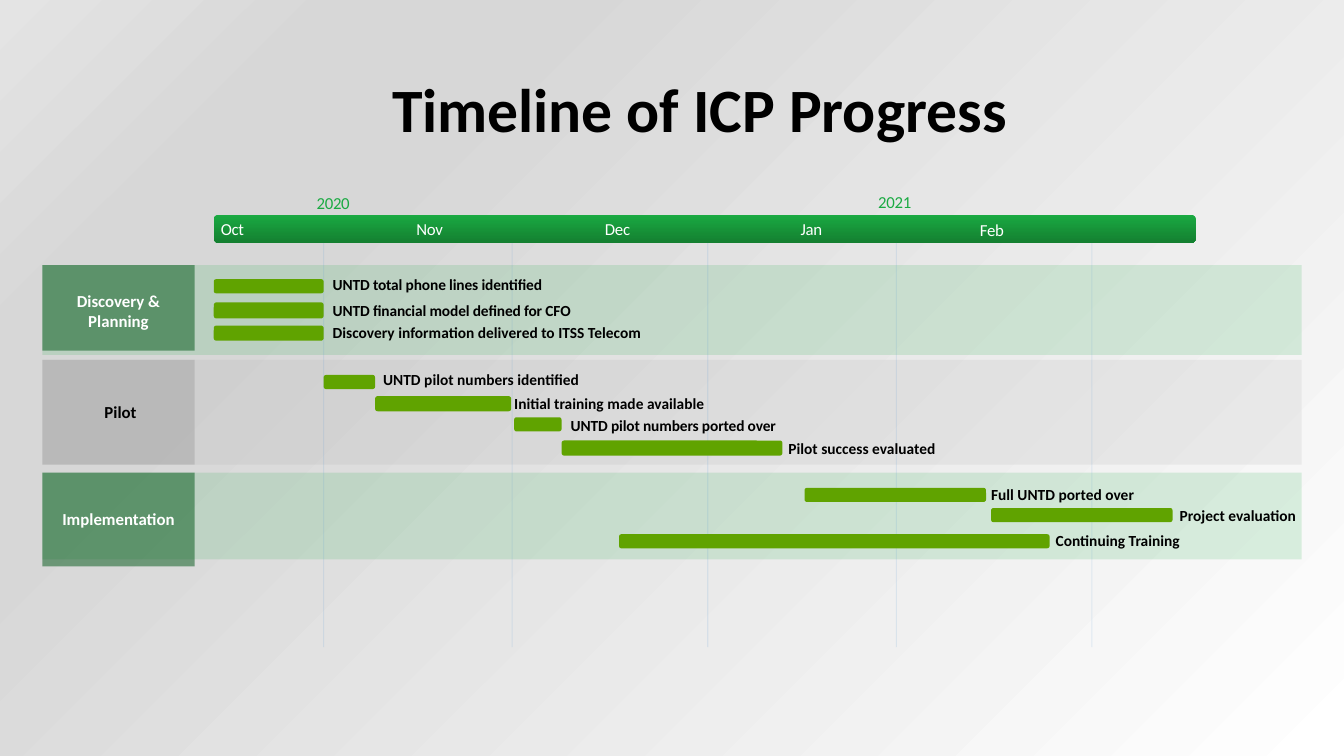
from lxml import etree
from pptx import Presentation
from pptx.dml.color import RGBColor
from pptx.enum.shapes import MSO_CONNECTOR, MSO_SHAPE
from pptx.enum.text import MSO_ANCHOR, PP_ALIGN
from pptx.oxml import parse_xml
from pptx.oxml.ns import qn
from pptx.util import Inches, Pt

GREEN = RGBColor(0x1A, 0xAA, 0x42)
SHADE = RGBColor(0x14, 0x7F, 0x30)
FOREST = RGBColor(0x00, 0x56, 0x16)
GRAY = RGBColor(0xA5, 0xA5, 0xA5)
BLUE = RGBColor(0x5B, 0x9B, 0xD5)
LIME = RGBColor(0x60, 0xA3, 0x00)
WHITE = RGBColor(0xFF, 0xFF, 0xFF)
BLACK = RGBColor(0x00, 0x00, 0x00)

BACKDROP = """<a:gradFill rotWithShape="1"
 xmlns:a="http://schemas.openxmlformats.org/drawingml/2006/main"><a:gsLst>
<a:gs pos="0"><a:srgbClr val="FFFFFF"/></a:gs>
<a:gs pos="74000"><a:srgbClr val="D7D7D7"/></a:gs>
<a:gs pos="83000"><a:srgbClr val="D7D7D7"/></a:gs>
<a:gs pos="100000"><a:srgbClr val="E4E4E4"/></a:gs></a:gsLst>
<a:path path="circle"><a:fillToRect l="100000" t="100000"/></a:path></a:gradFill>"""

prs = Presentation()
prs.slide_width, prs.slide_height = Inches(13.33), Inches(7.5)
s = prs.slides.add_slide(prs.slide_layouts[6])
s.background.fill.gradient()
grad = s.element.find(".//" + qn("a:gradFill"))
grad.getparent().replace(grad, parse_xml(BACKDROP))


def add_block(kind, x, y, w, h, color, alpha=100):
    sp = s.shapes.add_shape(kind, Inches(x), Inches(y), Inches(w), Inches(h))
    sp.shadow.inherit = False
    sp.line.fill.background()
    sp.fill.solid()
    sp.fill.fore_color.rgb = color
    if alpha < 100:
        clr = sp.element.spPr.find(".//" + qn("a:srgbClr"))
        etree.SubElement(clr, qn("a:alpha"), val=str(alpha * 1000))
    return sp


def add_text(text, x, y, w, h, size, color, bold=False, align=PP_ALIGN.LEFT, spacing=0):
    tf = s.shapes.add_textbox(Inches(x), Inches(y), Inches(w), Inches(h)).text_frame
    tf.margin_left = tf.margin_right = tf.margin_top = tf.margin_bottom = 0
    tf.vertical_anchor = MSO_ANCHOR.MIDDLE
    tf.word_wrap = True
    tf.text = text
    for p in tf.paragraphs:
        p.alignment = align
        for r in p.runs:
            r.font.name, r.font.size, r.font.bold = "Calibri", Pt(size), bold
            r.font.color.rgb = color
            if spacing:
                r.font._element.set("spc", str(spacing))
    return tf


phases = [
    ("Discovery &\nPlanning", 2.63, 0.89, 0.85, GREEN, FOREST, WHITE, 0.42, 2.89, 0.39),
    ("Pilot", 3.57, 1.04, 1.04, GRAY, GRAY, BLACK, 0.44, 3.88, 0.41),
    ("Implementation", 4.69, 0.86, 0.93, GREEN, FOREST, WHITE, 0.42, 5.04, 0.21),
]
for name, y, band_h, head_h, band, head, ink, tx, ty, th in phases:
    add_block(MSO_SHAPE.RECTANGLE, 0.42, y, 12.49, band_h, band, 15)
    add_block(MSO_SHAPE.RECTANGLE, 0.42, y, 1.51, head_h, head, 50)
    add_text(name, tx, ty, 1.51, th, 12, ink, True, PP_ALIGN.CENTER)

axis = add_block(MSO_SHAPE.ROUNDED_RECTANGLE, 2.12, 2.13, 9.74, 0.28, GREEN)
axis.fill.gradient()
axis.fill.gradient_angle = 270
for stop, color, position in zip(axis.fill.gradient_stops, (GREEN, SHADE), (0, 1)):
    stop.color.rgb = color
    stop.position = position

for x in (3.21, 5.08, 7.02, 8.89, 10.83):
    line = s.shapes.add_connector(
        MSO_CONNECTOR.STRAIGHT, Inches(x), Inches(2.41), Inches(x), Inches(6.42))
    line.line.color.rgb = BLUE
    line.line.width = Pt(0.75)
    clr = line.element.spPr.find(".//" + qn("a:srgbClr"))
    etree.SubElement(clr, qn("a:alpha"), val="15000")
    etree.SubElement(line.element.spPr, qn("a:effectLst"))

dates = [
    ("2020", 3.14, 1.92, GREEN), ("2021", 8.71, 1.91, GREEN),
    ("Oct", 2.19, 2.17, WHITE), ("Nov", 4.13, 2.17, WHITE),
    ("Dec", 6, 2.17, WHITE), ("Jan", 7.94, 2.17, WHITE),
    ("Feb", 9.72, 2.18, WHITE),
]
for text, x, y, color in dates:
    add_text(text, x, y, 0.4, 0.19, 12, color, spacing=-20)

tasks = [
    ("UNTD total phone lines identified", 2.12, 2.77, 1.09, 0.14, 3.3, 2.73, 3.53, -10),
    ("UNTD financial model defined for CFO", 2.12, 3, 1.09, 0.16, 3.3, 2.98, 3.11, -10),
    ("Discovery information delivered to ITSS Telecom", 2.12, 3.23, 1.09, 0.15, 3.3, 3.2, 3.59, 0),
    ("UNTD pilot numbers identified", 3.21, 3.72, 0.51, 0.14, 3.8, 3.67, 2.55, 0),
    ("Initial training made available", 3.72, 3.93, 1.35, 0.15, 5.1, 3.91, 2.17, 0),
    ("UNTD pilot numbers ported over", 5.1, 4.14, 0.47, 0.14, 5.66, 4.12, 2.25, -10),
    ("Pilot success evaluated", 5.57, 4.37, 2.19, 0.15, 7.82, 4.35, 2, 0),
    ("Full UNTD ported over", 7.98, 4.84, 1.8, 0.14, 9.83, 4.81, 1.63, 0),
    ("Project evaluation", 9.83, 5.04, 1.8, 0.14, 11.7, 5.02, 1.33, 0),
    ("Continuing Training", 6.14, 5.3, 4.27, 0.14, 10.47, 5.27, 1.33, 0),
]
for text, x, y, w, h, label_x, label_y, label_w, spacing in tasks:
    add_block(MSO_SHAPE.ROUNDED_RECTANGLE, x, y, w, h, LIME)
    add_text(text, label_x, label_y, label_w, 0.19, 11, BLACK, True, spacing=spacing)

title = add_text("Timeline of ICP Progress", 3.79, 0.66, 6.61, 0.84, 44, BLACK, True)
title.margin_left = title.margin_right = Inches(0.1)
title.margin_top = title.margin_bottom = Inches(0.05)
title.vertical_anchor = MSO_ANCHOR.BOTTOM
title.paragraphs[0].line_spacing = 0.9

prs.save("out.pptx")
